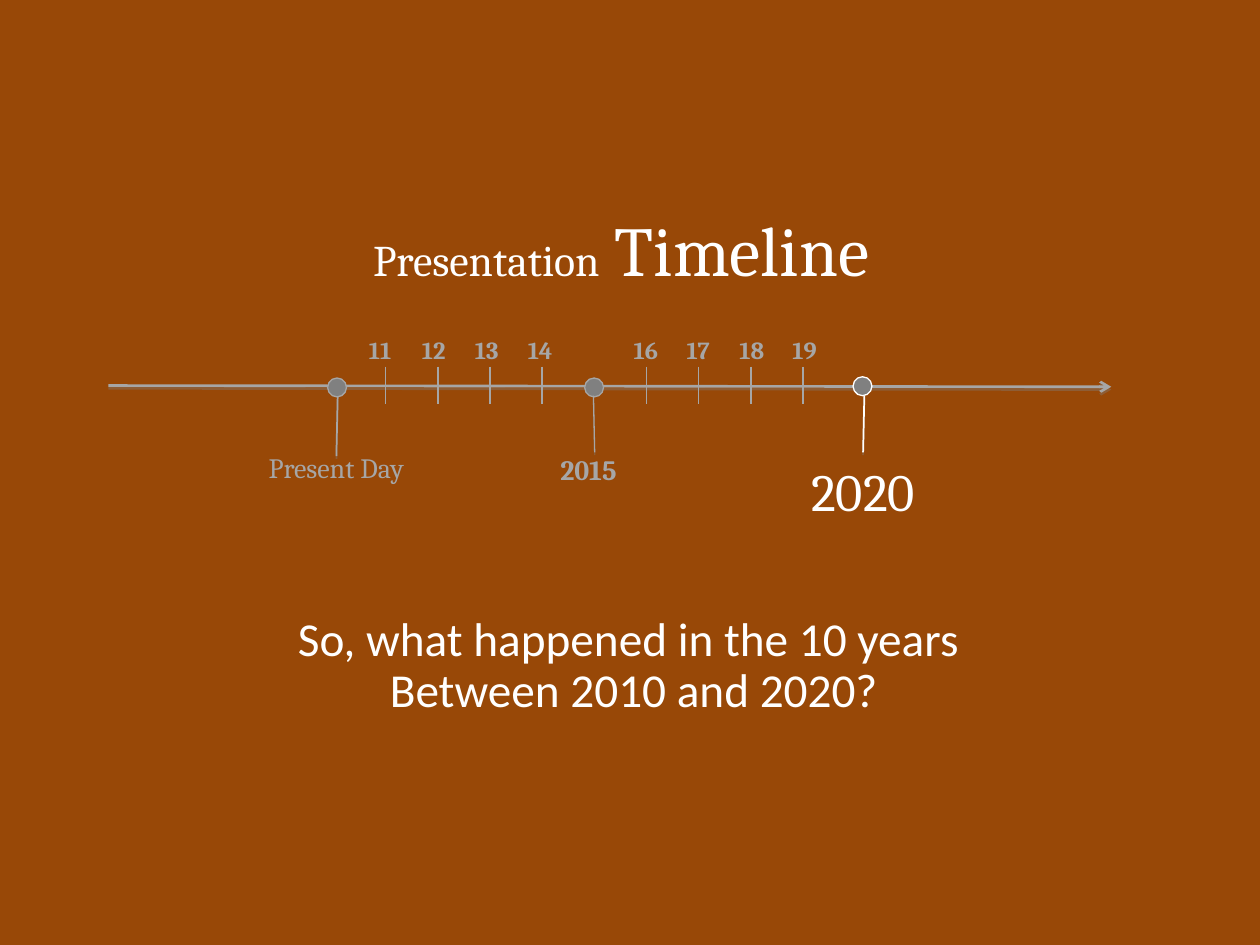
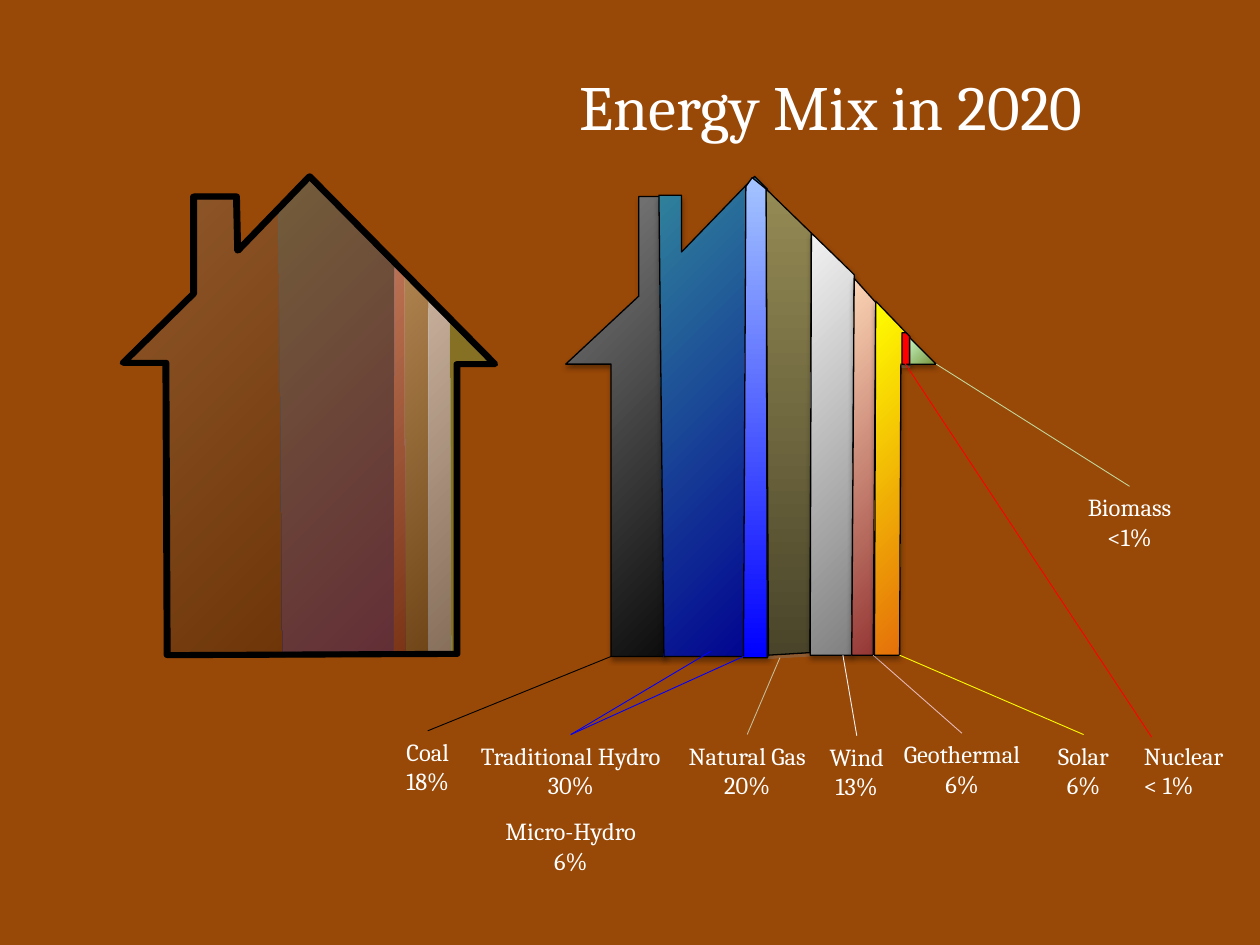
from dataclasses import dataclass
from typing import Optional

import pptx
import pptx.dml.color
import pptx.enum.shapes
import pptx.enum.text
import pptx.oxml
import pptx.oxml.ns
import pptx.util

ALIGN = pptx.enum.text.PP_ALIGN
ANCHOR = pptx.enum.text.MSO_ANCHOR
SHAPE = pptx.enum.shapes.MSO_SHAPE
Pt = pptx.util.Pt
qn = pptx.oxml.ns.qn
NS = 'xmlns:a="http://schemas.openxmlformats.org/drawingml/2006/main"'

# The slide is a grid of 100 columns by 75 rows of square cells.
WIDTH, HEIGHT = pptx.util.Inches(10), pptx.util.Inches(7.5)
CELL = WIDTH / 100

C = {
    "background": "984807", "text": "FFFFFF", "muted": "A6A6A6", "dot": "808080",
    "black": "000000", "coal": "0D0D0D", "grey": "808080", "navy": "000090",
    "teal": "31859C", "blue": "0000FF", "sky": "A4C4FF", "olive": "4A452A",
    "khaki": "948A54", "sand": "C4BD97", "smoke": "F2F2F2", "silver": "D9D9D9",
    "maroon": "632523", "rose": "D99694", "brick": "953735", "peach": "FCD5B5",
    "pink": "E6B9B8", "orange": "E46C0A", "yellow": "FFFF00", "leaf": "77933C",
    "mint": "CCFFCC", "lime": "C3D69B", "red": "FF0000",
}


@dataclass(frozen=True)
class Shadow:
    color: str
    alpha: int
    blur: float
    dist: float
    angle: int = 90

    def xml(self) -> str:
        return (f'<a:outerShdw blurRad="{Pt(self.blur)}" dist="{Pt(self.dist)}" '
                f'dir="{self.angle * 60000}" algn="ctr" rotWithShape="0">'
                f'<a:srgbClr val="{C[self.color]}"><a:alpha val="{self.alpha * 1000}"/>'
                f'</a:srgbClr></a:outerShdw>')


LINE_SHADOW = Shadow("grey", 38, 0, 1.6)
SLICE_SHADOW = Shadow("black", 35, 3.1, 1.8)
FLAT_SHADOW = Shadow("grey", 35, 0, 1.8)
TEXT_SHADOW = Shadow("grey", 60, 0, 3, 45)


@dataclass(frozen=True)
class Fill:
    """One colour, or a blend: from the lower right corner, or straight down."""
    start: str
    end: str = ""
    alpha: int = 100
    down: bool = False


@dataclass(frozen=True)
class Milestone:
    name: str
    dot: tuple
    stem: tuple
    label: tuple
    size: int
    color: str = "muted"
    bold: bool = False
    stem_width: float = 1
    joined: bool = False


@dataclass(frozen=True)
class Source:
    """A slice of the house, its label and the leader between them."""
    name: str
    points: tuple
    fill: Fill
    tip: tuple
    color: str
    lines: tuple = ()
    label: tuple = ()
    shadow: Optional[Shadow] = SLICE_SHADOW
    start: tuple = ()
    label_of: str = ""
    align: int = ALIGN.CENTER


MILESTONES = (
    Milestone("Present Day", (26, 30), (26.8, 31.5, 26.7, 36.2), (17.7, 35.3, 18, 3.7), 16),
    Milestone("2020", (67.7, 29.9), (68.6, 31.4, 68.5, 36), (61.1, 35.9, 14.8, 6.1), 30,
              "text", joined=True),
    Milestone("2015", (46.4, 30), (47.1, 31.4, 47.2, 35.9), (42.3, 35.4, 8.8, 3.7), 16,
              bold=True, stem_width=0.75),
)

FADED_SLICES = (
    (((22.1, 16.5), (22.4, 52), (13.1, 51.9), (13, 28.7), (9.7, 28.7), (15.3, 23.3),
      (15.2, 15.5), (18.8, 15.5), (18.8, 19.8)), Fill("coal", "grey", 30)),
    (((31.3, 20.9), (31.2, 52), (22.4, 52), (22.1, 16.4), (24.4, 14.2)),
     Fill("navy", "teal", 35)),
    (((32.1, 21.7), (32.2, 51.9), (34, 51.9), (34, 23.9)), Fill("olive", "sand", 50)),
    (((31.3, 20.8), (31.3, 51.9), (32.2, 52), (32.1, 21.7)), Fill("maroon", "rose", 54)),
    (((34, 51.8), (35.8, 51.9), (35.7, 25.5), (34, 23.8)), Fill("grey", "silver", 70)),
    (((35.7, 25.3), (35.8, 51.9), (36.2, 51.9), (36.2, 28.9), (39.1, 28.9)),
     Fill("leaf", alpha=54)),
)

HOUSE = ((24.5, 14), (18.8, 19.9), (18.7, 15.6), (15.3, 15.6), (15.3, 23.3), (9.7, 28.8),
         (13.1, 28.8), (13.2, 52), (36.2, 51.9), (36.2, 28.9), (39.2, 28.9))

SOURCES = (
    Source("Coal", ((52.4, 15.6), (52.8, 52.1), (48.5, 52.1), (48.5, 28.9), (44.9, 28.9),
                    (50.7, 23.5), (50.7, 15.6)),
           Fill("coal", "grey"), (48.5, 52.1), "black", ("Coal", "18%"), (31, 58, 5.9, 5.7)),
    Source("Hydro", ((60.9, 15), (61, 52.1), (52.7, 52.1), (52.3, 15.5), (54.1, 15.5),
                     (54.1, 20), (59.9, 14)),
           Fill("navy", "teal"), (56.4, 51.7), "blue",
           ("Traditional Hydro", "30%", "Micro-Hydro", "6%"), (36.8, 58.3, 17, 11.8)),
    Source("Gas", ((60.8, 15), (61, 52), (64.3, 51.8), (64.4, 18.5)),
           Fill("khaki", "olive", down=True), (61.9, 52.2), "sand",
           ("Natural Gas", "20%"), (53.4, 58.3, 11.8, 5.7), FLAT_SHADOW),
    Source("Wind", ((64.4, 18.5), (64.3, 52), (67.6, 52), (67.8, 21.8)),
           Fill("grey", "smoke"), (66.9, 52), "smoke", ("Wind", "13%"), (64.7, 58.4, 6.6, 5.7)),
    Source("Geothermal", ((67.8, 22.1), (67.6, 52), (69.3, 52), (69.5, 24)),
           Fill("brick", "peach"), (69.3, 52), "pink",
           ("Geothermal", "6%"), (70.4, 58.2, 11.9, 5.7)),
    Source("Solar", ((72.2, 26.7), (72.2, 29), (71.5, 28.9), (71.4, 52), (69.4, 52),
                     (69.5, 23.9)),
           Fill("orange", "yellow"), (71.4, 52), "yellow", ("Solar", "6%"), (82.8, 58.3, 6.4, 5.7)),
    Source("Biomass", ((74.3, 28.9), (72.1, 26.7), (72, 28.9)),
           Fill("leaf", "mint"), (74.3, 28.9), "lime", ("Biomass", "<1%"), (84.6, 38.6, 10.1, 5.7)),
    Source("Micro-Hydro", ((60.8, 15), (59.7, 14.1), (59.2, 14.8), (59, 52.2), (60.9, 52.2)),
           Fill("sky", "blue", down=True), (59, 52.1), "blue", shadow=None, label_of="Hydro"),
    Source("Nuclear", ((71.6, 26.4), (71.9, 26.4), (72.2, 26.7), (72.2, 28.9), (71.6, 28.9)),
           Fill("red"), (71.8, 28.8), "red", ("Nuclear", "< 1%"), (89.8, 58.3, 8.9, 5.7),
           FLAT_SHADOW, start=(91.4, 58.5), align=ALIGN.LEFT),
)


def cells(*counts: float) -> list:
    return [pptx.util.Emu(round(n * CELL)) for n in counts]


def rgb(name: str):
    return pptx.dml.color.RGBColor.from_string(C[name])


def set_line(s, color: str, width: float) -> None:
    s.line.color.rgb = rgb(color)
    s.line.width = Pt(width)


def set_shadow(s, shadow: Optional[Shadow]) -> None:
    xml = shadow.xml() if shadow else ""
    s._element.spPr.append(pptx.oxml.parse_xml(f"<a:effectLst {NS}>{xml}</a:effectLst>"))


def set_fill(s, fill: Fill) -> None:
    def color(name: str) -> str:
        return f'<a:srgbClr val="{C[name]}"><a:alpha val="{fill.alpha * 1000}"/></a:srgbClr>'

    if fill.end:
        way = ('<a:lin ang="5400000" scaled="0"/>' if fill.down else
               '<a:path path="circle"><a:fillToRect l="100000" t="100000"/></a:path>')
        xml = (f'<a:gradFill {NS} rotWithShape="1"><a:gsLst><a:gs pos="0">{color(fill.start)}</a:gs>'
               f'<a:gs pos="100000">{color(fill.end)}</a:gs></a:gsLst>{way}</a:gradFill>')
    else:
        xml = f"<a:solidFill {NS}>{color(fill.start)}</a:solidFill>"
    s._element.spPr.find(qn("a:custGeom")).addnext(pptx.oxml.parse_xml(xml))


def add_text(slide, at: tuple, *paragraphs, size: float = 14, color: str = "text",
             font: str = "Cambria", bold: bool = False, align=ALIGN.CENTER,
             anchor=ANCHOR.TOP, wrap: bool = True, spacing: Optional[float] = None,
             gaps: Optional[dict] = None, shadow: Optional[Shadow] = None):
    """Each paragraph is a string or a tuple of (text, size) runs."""
    s = slide.shapes.add_textbox(*cells(*at))
    tf = s.text_frame
    tf.word_wrap = wrap
    tf.vertical_anchor = anchor
    for i, paragraph in enumerate(paragraphs):
        p = tf.paragraphs[0] if i == 0 else tf.add_paragraph()
        p.alignment = align
        p.line_spacing = spacing
        if gaps and i in gaps:
            p.space_before = Pt(gaps[i])
        runs = ((paragraph, size),) if isinstance(paragraph, str) else paragraph
        for words, run_size in runs:
            r = p.add_run()
            r.text = words
            r.font.name, r.font.size, r.font.bold = font, Pt(run_size), bold
            r.font.color.rgb = rgb(color)
            if shadow:
                effect = pptx.oxml.parse_xml(f"<a:effectLst {NS}>{shadow.xml()}</a:effectLst>")
                r.font._element.find(qn("a:solidFill")).addnext(effect)
    return s


def add_line(slide, ends: tuple, color: str, width: float,
             shadow: Optional[Shadow] = None, arrow: bool = False, begin=None, end=None):
    s = slide.shapes.add_connector(pptx.enum.shapes.MSO_CONNECTOR.STRAIGHT, *cells(*ends))
    if begin is not None:
        s.begin_connect(begin, 0)
    if end is not None:
        s.end_connect(end, 0)
    set_line(s, color, width)
    if arrow:
        s.line._get_or_add_ln().append(pptx.oxml.parse_xml(f'<a:tailEnd {NS} type="arrow"/>'))
    set_shadow(s, shadow)
    return s


def add_outline(slide, points: tuple, fill: Optional[Fill], width: float = 0,
                shadow: Optional[Shadow] = None):
    first, *rest = [cells(*point) for point in points]
    builder = slide.shapes.build_freeform(*first, scale=1.0)
    builder.add_line_segments(rest, close=True)
    s = builder.convert_to_shape()
    if fill:
        set_fill(s, fill)
    else:
        s.fill.background()
    if width:
        set_line(s, "black", width)
        s.line._get_or_add_ln().append(pptx.oxml.parse_xml(f"<a:round {NS}/>"))
    else:
        s.line.fill.background()
    set_shadow(s, shadow)
    return s


def add_slide(prs):
    slide = prs.slides.add_slide(prs.slide_layouts[6])
    slide.background.fill.solid()
    slide.background.fill.fore_color.rgb = rgb("background")
    return slide


def add_milestone(slide, m: Milestone) -> None:
    s = slide.shapes.add_shape(SHAPE.OVAL, *cells(*m.dot, 1.5, 1.5))
    s.fill.solid()
    s.fill.fore_color.rgb = rgb("dot")
    set_line(s, m.color, 0.75)
    set_shadow(s, None)
    label = add_text(slide, m.label, m.name, size=m.size, color=m.color, bold=m.bold)
    add_line(slide, m.stem, m.color, m.stem_width, LINE_SHADOW, end=label if m.joined else None)


def timeline_slide(prs) -> None:
    slide = add_slide(prs)
    add_text(slide, (27.5, 15.9, 43.6, 7.7), (("Presentation", 25), (" Timeline", 40)), wrap=False)
    add_line(slide, (8.6, 30.6, 88.2, 30.7), "muted", 1.5, LINE_SHADOW, arrow=True)
    for year in (11, 12, 13, 14, 16, 17, 18, 19):
        x = 30.6 + 4.14 * (year - 11)
        add_line(slide, (x, 29.1, x, 32.1), "muted", 1)
        add_text(slide, (28.3 + 4.2 * (year - 11), 26.1, 5.5, 3.4), str(year),
                 color="muted", bold=True, align=ALIGN.LEFT)
    for milestone in MILESTONES:
        add_milestone(slide, milestone)
    add_text(slide, (11.5, 48.3, 77.6, 9.2), "So, what happened in the 10 years ",
             "Between 2010 and 2020?", size=27, font="Calibri", anchor=ANCHOR.MIDDLE,
             spacing=0.9, shadow=TEXT_SHADOW)


def energy_slide(prs) -> None:
    slide = add_slide(prs)
    add_text(slide, (36.2, 4.9, 59.5, 7.1), "Energy Mix in 2020", size=36)
    for points, fill in FADED_SLICES:
        add_outline(slide, points, fill)
    for shift, width in ((0, 3), (0.1, 3.5)):
        add_outline(slide, tuple((x + shift, y) for x, y in HOUSE), None, width)
    labels = {}
    for source in SOURCES:
        add_outline(slide, source.points, source.fill, 0.75, source.shadow)
        if source.lines:
            labels[source.name] = add_text(slide, source.label, *source.lines,
                                           align=source.align, wrap=False, gaps={2: 9.5})
        label = None if source.start else labels[source.label_of or source.name]
        add_line(slide, (*(source.start or source.tip), *source.tip), source.color, 0.5, begin=label)


def main() -> None:
    prs = pptx.Presentation()
    prs.slide_width, prs.slide_height = WIDTH, HEIGHT
    timeline_slide(prs)
    energy_slide(prs)
    prs.save("out.pptx")


if __name__ == "__main__":
    main()
